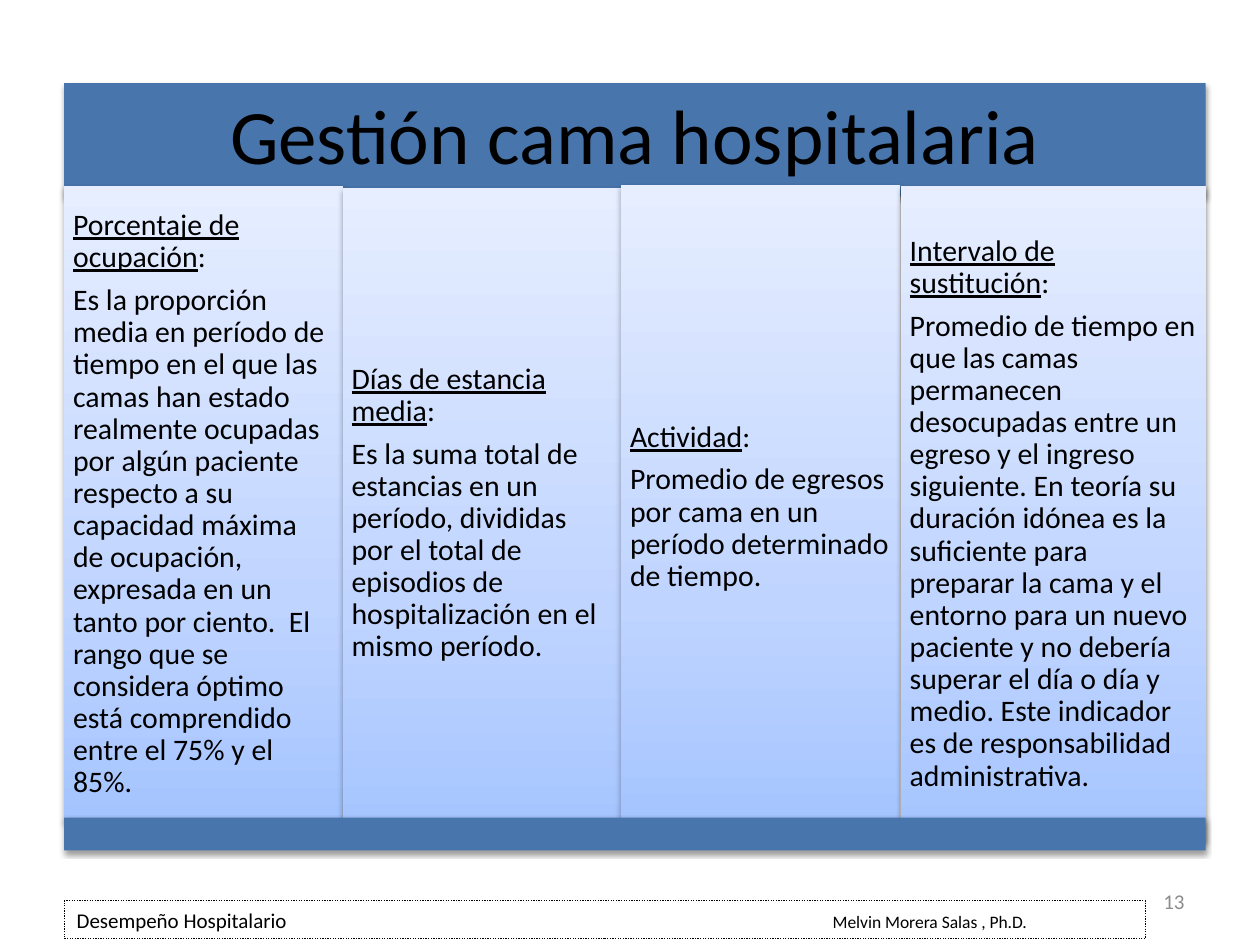
from collections import namedtuple

from lxml.etree import SubElement
from pptx import Presentation
from pptx.dml.color import RGBColor
from pptx.enum.dml import MSO_LINE
from pptx.enum.shapes import MSO_SHAPE as Shape
from pptx.enum.text import MSO_ANCHOR as Anchor, PP_ALIGN as Align
from pptx.oxml.ns import qn
from pptx.util import Inches, Pt

# The page is a grid of 100 columns by 75 rows of square units
COLS, ROWS = 100, 75
UNIT = Inches(0.1)
Box = namedtuple("Box", "left top width height")

FONT = "Calibri"
BLUE, BLACK, GRAY = "4875AC", "000000", "8C8C8C"
GRADIENT = [(0, "A4C4FF"), (35, "BFD4FF"), (100, "E6EEFF")]

TITLE = "Gestión cama hospitalaria"
# Top, width and height of each column, then its term and definition
INDICATORS = [
    (14.8, 22.1, 50.5, "Porcentaje de ocupación",
     "Es la proporción media en período de tiempo en el que las camas han estado "
     "realmente ocupadas por algún paciente respecto a su capacidad máxima de "
     "ocupación, expresada en un tanto por ciento.  El rango que se considera "
     "óptimo está comprendido entre el 75% y el 85%."),
    (14.9, 22.1, 51.7, "Días de estancia media",
     "Es la suma total de estancias en un período, divididas por el total de "
     "episodios de hospitalización en el mismo período."),
    (14.7, 22.1, 51.1, "Actividad",
     "Promedio de egresos por cama en un período determinado de tiempo."),
    (14.8, 24.2, 52, "Intervalo de sustitución",
     "Promedio de tiempo en que las camas permanecen desocupadas entre un egreso y "
     "el ingreso siguiente. En teoría su duración idónea es la suficiente para "
     "preparar la cama y el entorno para un nuevo paciente y no debería superar el "
     "día o día y medio. Este indicador es de responsabilidad administrativa."),
]


def color(hex_text):
    return RGBColor.from_string(hex_text)


def emu(box):
    return [round(value * UNIT) for value in box]


def add_panel(page, box, fill=None):
    panel = page.shapes.add_shape(Shape.RECTANGLE, *emu(box))
    panel.shadow.inherit = False
    panel.line.fill.background()
    if fill:
        panel.fill.solid()
        panel.fill.fore_color.rgb = color(fill)
    else:
        panel.fill.background()
    return panel


def add_shadow(panel):
    effects = panel._element.spPr.find(qn("a:effectLst"))
    shadow = SubElement(effects, qn("a:outerShdw"), blurRad=str(Pt(3.1)),
                        dist=str(Pt(1.6)), dir="5400000", rotWithShape="0")
    tint = SubElement(shadow, qn("a:srgbClr"), val=BLACK)
    SubElement(tint, qn("a:alpha"), val="38000")


def set_gradient(panel):
    panel.fill.gradient()
    panel.fill.gradient_angle = 90
    stops = panel._element.spPr.find(qn("a:gradFill")).find(qn("a:gsLst"))
    for old in list(stops):
        stops.remove(old)
    for percent, tint in GRADIENT:
        stop = SubElement(stops, qn("a:gs"), pos=str(percent * 1000))
        SubElement(stop, qn("a:srgbClr"), val=tint)


def set_frame(shape, anchor, inset_x, inset_y):
    frame = shape.text_frame
    frame.word_wrap = True
    frame.vertical_anchor = anchor
    frame.margin_left = frame.margin_right = Inches(inset_x)
    frame.margin_top = frame.margin_bottom = Inches(inset_y)
    return frame


def add_span(para, text, size, tint=BLACK, underline=None):
    span = para.add_run()
    span.text = text
    span.font.name, span.font.size = FONT, Pt(size)
    span.font.color.rgb = color(tint)
    span.font.underline = underline


def style_para(para, size, align=Align.LEFT):
    para.alignment = align
    para.line_spacing = 0.9
    para.space_after = Pt(round(size * 0.35))


def add_title(page, box):
    banner = add_panel(page, box, BLUE)
    add_shadow(banner)
    para = set_frame(banner, Anchor.MIDDLE, 0.18, 0.18).paragraphs[0]
    style_para(para, 44, Align.CENTER)
    add_span(para, TITLE, 44)


def add_indicator(page, box, term, definition):
    panel = add_panel(page, box)
    set_gradient(panel)
    add_shadow(panel)
    frame = set_frame(panel, Anchor.MIDDLE, 0.07, 0.07)
    heading, body = frame.paragraphs[0], frame.add_paragraph()
    for para in (heading, body):
        style_para(para, 17)
    add_span(heading, term, 17, underline=True)
    add_span(heading, ":", 17)
    add_span(body, definition, 17)


def add_indicators(page, left, right):
    for index, (top, width, height, term, definition) in enumerate(INDICATORS):
        # The last, wider column is flush with the right edge
        last = index == len(INDICATORS) - 1
        x = right - width if last else left + index * width
        add_indicator(page, Box(x, top, width, height), term, definition)


def add_footer(page, box):
    strip = add_panel(page, box)
    strip.line.color.rgb = color(BLACK)
    strip.line.width = Pt(0.75)
    strip.line.dash_style = MSO_LINE.ROUND_DOT
    para = set_frame(strip, Anchor.TOP, 0.1, 0.05).paragraphs[0]
    para.alignment = Align.LEFT
    # One tab stop places the author's name
    tabs = SubElement(para._p.get_or_add_pPr(), qn("a:tabLst"))
    SubElement(tabs, qn("a:tab"), pos=str(60 * UNIT), algn="l")
    add_span(para, "Desempeño Hospitalario\t", 12)
    add_span(para, "Melvin Morera Salas , Ph.D.", 10)


def add_page_number(page, box):
    label = page.shapes.add_textbox(*emu(box))
    para = set_frame(label, Anchor.MIDDLE, 0.1, 0.05).paragraphs[0]
    para.alignment = Align.RIGHT
    add_span(para, "13", 12, GRAY)


def main():
    deck = Presentation()
    deck.slide_width, deck.slide_height = COLS * UNIT, ROWS * UNIT
    page = deck.slides.add_slide(deck.slide_layouts[6])
    left, width = 5.1, 90.6

    add_title(page, Box(left, 6.6, width, 9))
    add_indicators(page, left, left + width)
    add_shadow(add_panel(page, Box(left, 64.9, width, 2.6), BLUE))
    add_footer(page, Box(left, 71.5, 85.8, 3))
    add_page_number(page, Box(71.7, 69.5, 23.3, 4))
    deck.save("out.pptx")


if __name__ == "__main__":
    main()
